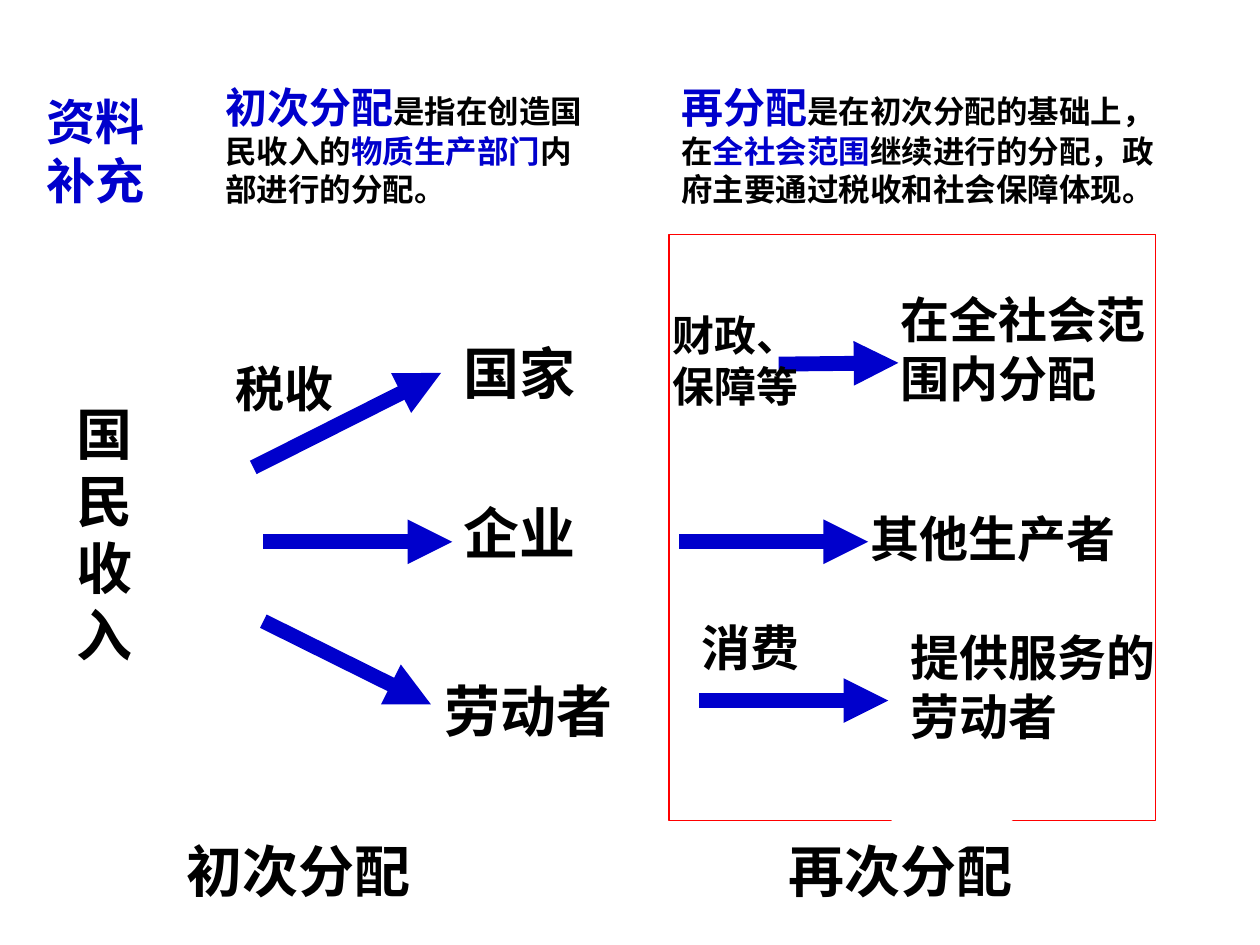
"""Build a slide on the first and second distribution of national income."""
from dataclasses import dataclass

import lxml.etree
import pptx
import pptx.dml.color
import pptx.enum.shapes
import pptx.enum.text
import pptx.oxml.ns
import pptx.util

HUES = {"ink": "000000", "blue": "0000CC", "red": "FF0000", "white": "FFFFFF"}
FONT = "Arial"
WIDE, HIGH = 10, 7.5
COLS, ROWS = 100, 75
KIND = pptx.enum.shapes.MSO_SHAPE


@dataclass
class Run:
    text: str
    size: int
    hue: str = "ink"


@dataclass
class Text:
    col: float
    row: float
    cols: float
    rows: float
    paras: list[list[Run]]
    inset: float = 1


@dataclass
class Arrow:
    col: float
    row: float
    end_col: float
    end_row: float


@dataclass
class Block:
    kind: KIND
    col: float
    row: float
    cols: float
    rows: float
    line: str
    fill: str | None = None


def label(col: float, row: float, cols: float, rows: float,
          text: str, size: int, inset: float = 1) -> Text:
    return Text(col, row, cols, rows, [[Run(text, size)]], inset)


def across(cols: float) -> pptx.util.Emu:
    return pptx.util.Inches(WIDE * cols / COLS)


def down(rows: float) -> pptx.util.Emu:
    return pptx.util.Inches(HIGH * rows / ROWS)


def tint(hue: str) -> pptx.dml.color.RGBColor:
    return pptx.dml.color.RGBColor.from_string(HUES[hue])


def draw_text(slide: pptx.slide.Slide, item: Text) -> None:
    box = slide.shapes.add_textbox(
        across(item.col), down(item.row), across(item.cols), down(item.rows))
    frame = box.text_frame
    frame.word_wrap = True
    frame.auto_size = pptx.enum.text.MSO_AUTO_SIZE.SHAPE_TO_FIT_TEXT
    frame.margin_left = across(item.inset)
    for i, runs in enumerate(item.paras):
        para = frame.add_paragraph() if i else frame.paragraphs[0]
        for part in runs:
            run = para.add_run()
            run.text = part.text
            run.font.name = FONT
            run.font.size = pptx.util.Pt(part.size)
            run.font.bold = True
            run.font.color.rgb = tint(part.hue)


def draw_arrow(slide: pptx.slide.Slide, item: Arrow) -> None:
    link = slide.shapes.add_connector(
        pptx.enum.shapes.MSO_CONNECTOR.STRAIGHT,
        across(item.col), down(item.row),
        across(item.end_col), down(item.end_row))
    link.line.color.rgb = tint("blue")
    link.line.width = pptx.util.Pt(8.5)
    name = pptx.oxml.ns.qn
    lxml.etree.SubElement(
        link.line._get_or_add_ln(), name("a:tailEnd"), type="triangle")
    lxml.etree.SubElement(link._element.spPr, name("a:effectLst"))


def draw_block(slide: pptx.slide.Slide, item: Block) -> None:
    shape = slide.shapes.add_shape(
        item.kind, across(item.col), down(item.row),
        across(item.cols), down(item.rows))
    shape.shadow.inherit = False
    shape.line.color.rgb = tint(item.line)
    shape.line.width = pptx.util.Pt(0.75)
    if item.fill:
        shape.fill.solid()
        shape.fill.fore_color.rgb = tint(item.fill)
    else:
        shape.fill.background()


FIRST = [
    Run("初次分配", 24, "blue"), Run("是指在创造国民收入的", 18),
    Run("物质生产部门", 18, "blue"), Run("内部进行的分配。", 18)]
AGAIN = [
    Run("再分配", 24, "blue"), Run("是在初次分配的基础上，在", 18),
    Run("全社会范围", 18, "blue"),
    Run("继续进行的分配，政府主要通过税收和社会保障体现。", 18)]
EXTRA = [[Run(text, 28, "blue")] for text in ("资料", "补充")]

ITEMS = [
    label(5.1, 31.2, 7.5, 22.3, "国民收入", 32),
    Arrow(20.1, 37.1, 35, 29.6),
    Arrow(20.9, 43, 35.9, 43),
    Arrow(20.9, 49.3, 34.2, 55.9),
    label(35.8, 26.4, 13.1, 6.3, "国家", 32),
    label(35.8, 39.1, 13.1, 6.3, "企业", 32),
    label(34.3, 53.2, 18.1, 6.3, "劳动者", 32),
    Block(KIND.DOWN_ARROW, 28.7, 62.7, 11.7, 6.7, "white", "white"),
    label(13.8, 65.9, 42.5, 6.3, "初次分配", 32),
    Arrow(61.8, 28.9, 71.3, 28.8),
    label(52.4, 24.1, 12.6, 9, "财政、保障等", 24),
    label(70.5, 22.5, 25.2, 10.3, "在全社会范围内分配", 28),
    label(71.3, 49.3, 23.3, 10.3, "提供服务的劳动者", 28),
    Arrow(55.5, 55.6, 70.5, 55.6),
    label(54.7, 48.5, 13.3, 5.7, "消费", 28),
    Arrow(53.9, 43, 68.9, 43),
    label(68.1, 39.9, 23.9, 5.7, "其他生产者", 28),
    Block(KIND.RECTANGLE, 53.1, 18.6, 38.6, 46.5, "red"),
    label(58.7, 65.9, 30.8, 6.3, "再次分配", 32, inset=3.9),
    Block(KIND.DOWN_ARROW, 69.7, 61.1, 11.7, 6.7, "white", "white"),
    label(17.7, 28, 12.5, 5.7, "税收", 28),
    Text(16.9, 6, 31.5, 11, [FIRST]),
    Text(53.1, 6, 41.7, 11, [AGAIN]),
    Text(2.7, 6.8, 14.2, 10.3, EXTRA),
]
DRAW = {Text: draw_text, Arrow: draw_arrow, Block: draw_block}


def main() -> None:
    deck = pptx.Presentation()
    deck.slide_width = pptx.util.Inches(WIDE)
    deck.slide_height = pptx.util.Inches(HIGH)
    slide = deck.slides.add_slide(deck.slide_layouts[6])
    for item in ITEMS:
        DRAW[type(item)](slide, item)
    deck.save("out.pptx")


if __name__ == "__main__":
    main()
